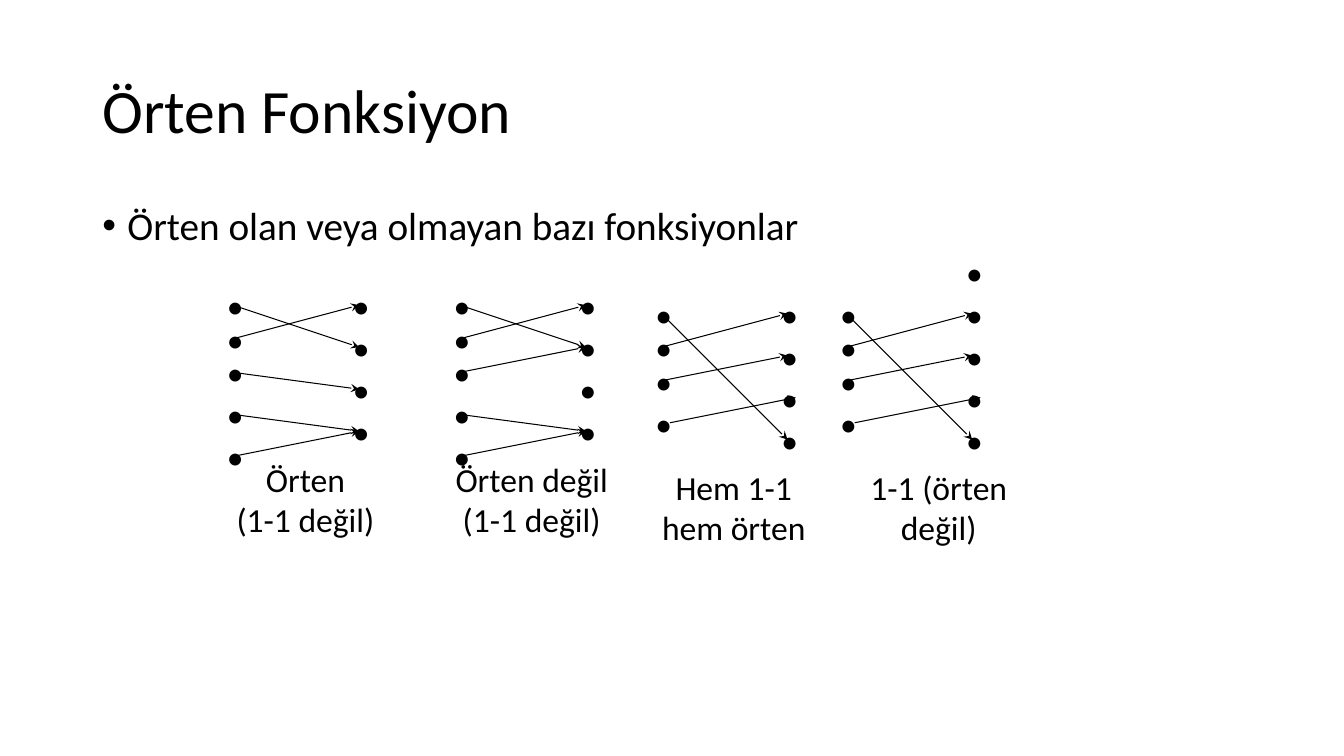
import pptx
import pptx.dml.color
import pptx.enum.shapes
import pptx.enum.text
import pptx.util
from pptx.oxml.ns import qn

Pt = pptx.util.Pt
ALIGN = pptx.enum.text.PP_ALIGN
ANCHOR = pptx.enum.text.MSO_ANCHOR
INK = "000000"
COLUMN_GAP = 90
FIVE_DOTS = (0, 24, 48, 78, 108)
FOUR_DOTS = FIVE_DOTS[:4]
TARGET_DOTS = (0, 30, 60, 90)
ONE_TO_ONE_ARROWS = ((0, 24, 0), (0, 48, 30), (0, 0, 90), (6, 78, 60))

PANELS = (
    {"at": (166.5, 218), "sources": FIVE_DOTS, "targets": TARGET_DOTS,
     "arrows": ((0, 0, 30), (0, 24, 0), (0, 48, 60), (0, 78, 90), (0, 108, 90)),
     "caption": "Örten\v(1-1 değil)", "caption_box": (-5.2, 105.5, 113.8, 65.5), "wrap": False},
    {"at": (328.5, 218), "sources": FIVE_DOTS, "targets": TARGET_DOTS,
     "arrows": ((0, 0, 30), (0, 24, 0), (0, 48, 30), (0, 78, 90), (0, 108, 90)),
     "caption": "Örten değil\v(1-1 değil)", "caption_box": (-11, 105.5, 124.6, 65.5), "wrap": False},
    {"at": (472.5, 224), "sources": FOUR_DOTS, "targets": TARGET_DOTS,
     "arrows": ONE_TO_ONE_ARROWS,
     "caption": "Hem 1-1\vhem örten", "caption_box": (-7.4, 105.5, 118, 65.5), "wrap": False},
    {"at": (604.5, 224), "sources": FOUR_DOTS, "targets": (-30,) + TARGET_DOTS,
     "arrows": ONE_TO_ONE_ARROWS,
     "caption": "1-1 (örten değil)", "caption_box": (6, 105.5, 120.2, 65.5), "wrap": True},
)


def color(value):
    """Turn a hex string into a colour."""
    return pptx.dml.color.RGBColor.from_string(value)


def add_text(page, box, text, size, align=ALIGN.LEFT, anchor=ANCHOR.MIDDLE, wrap=True, grow=False):
    """Place text in a box and return its paragraph."""
    frame = page.shapes.add_textbox(*map(Pt, box)).text_frame
    frame.word_wrap = wrap
    frame.vertical_anchor = anchor
    if grow:
        frame.auto_size = pptx.enum.text.MSO_AUTO_SIZE.SHAPE_TO_FIT_TEXT
    para = frame.paragraphs[0]
    para.text = text
    para.alignment = align
    for span in para.runs:
        span.font.name = "Calibri"
        span.font.size = Pt(size)
        span.font.color.rgb = color(INK)
    return para


def add_title(page, box):
    """Place the slide title."""
    add_text(page, box, "Örten Fonksiyon", 44).line_spacing = 0.9


def add_body(page, box):
    """Place the bulleted sentence."""
    para = add_text(page, box, "Örten olan veya olmayan bazı fonksiyonlar", 28, anchor=ANCHOR.TOP)
    para.line_spacing = 0.9
    para.space_before = Pt(10)
    properties = para._p.get_or_add_pPr()
    properties.set("marL", str(Pt(18)))
    properties.set("indent", str(Pt(-18)))
    font = properties.makeelement(qn("a:buFont"), {"typeface": "Arial"})
    bullet = properties.makeelement(qn("a:buChar"), {"char": "•"})
    properties.extend((font, bullet))


def add_dot(page, x, y):
    """Place a dot centred on a point."""
    add_text(page, (x - 11.5, y - 18, 23, 36), "•", 24, ALIGN.CENTER, wrap=False, grow=True)


def add_arrow(page, start, end):
    """Draw a thin arrow between two points."""
    arrow = page.shapes.add_connector(
        pptx.enum.shapes.MSO_CONNECTOR.STRAIGHT, *map(Pt, start + end))
    arrow.line.color.rgb = color(INK)
    arrow.line.width = Pt(0.75)
    line = arrow.line._get_or_add_ln()
    line.append(line.makeelement(qn("a:tailEnd"), {"type": "stealth"}))
    properties = arrow._element.spPr
    properties.append(properties.makeelement(qn("a:effectLst"), {}))


def add_mapping(page, panel):
    """Draw one function diagram with its caption."""
    left, top = panel["at"]
    x, y, width, height = panel["caption_box"]
    add_text(page, (left + x, top + y, width, height), panel["caption"], 24,
             ALIGN.CENTER, wrap=panel["wrap"], grow=True)
    for offset in panel["sources"]:
        add_dot(page, left, top + offset)
    for offset in panel["targets"]:
        add_dot(page, left + COLUMN_GAP, top + offset)
    for shift, source, target in panel["arrows"]:
        start = left + shift
        add_arrow(page, (start, top + source), (start + COLUMN_GAP, top + target))


def main():
    """Build and save the deck."""
    deck = pptx.Presentation()
    deck.slide_width, deck.slide_height = Pt(960), Pt(540)
    page = deck.slides.add_slide(deck.slide_layouts[6])
    add_title(page, (66, 28.75, 828, 104.4))
    add_body(page, (66, 143.75, 828, 342.6))
    for panel in PANELS:
        add_mapping(page, panel)
    deck.save("out.pptx")


if __name__ == "__main__":
    main()
